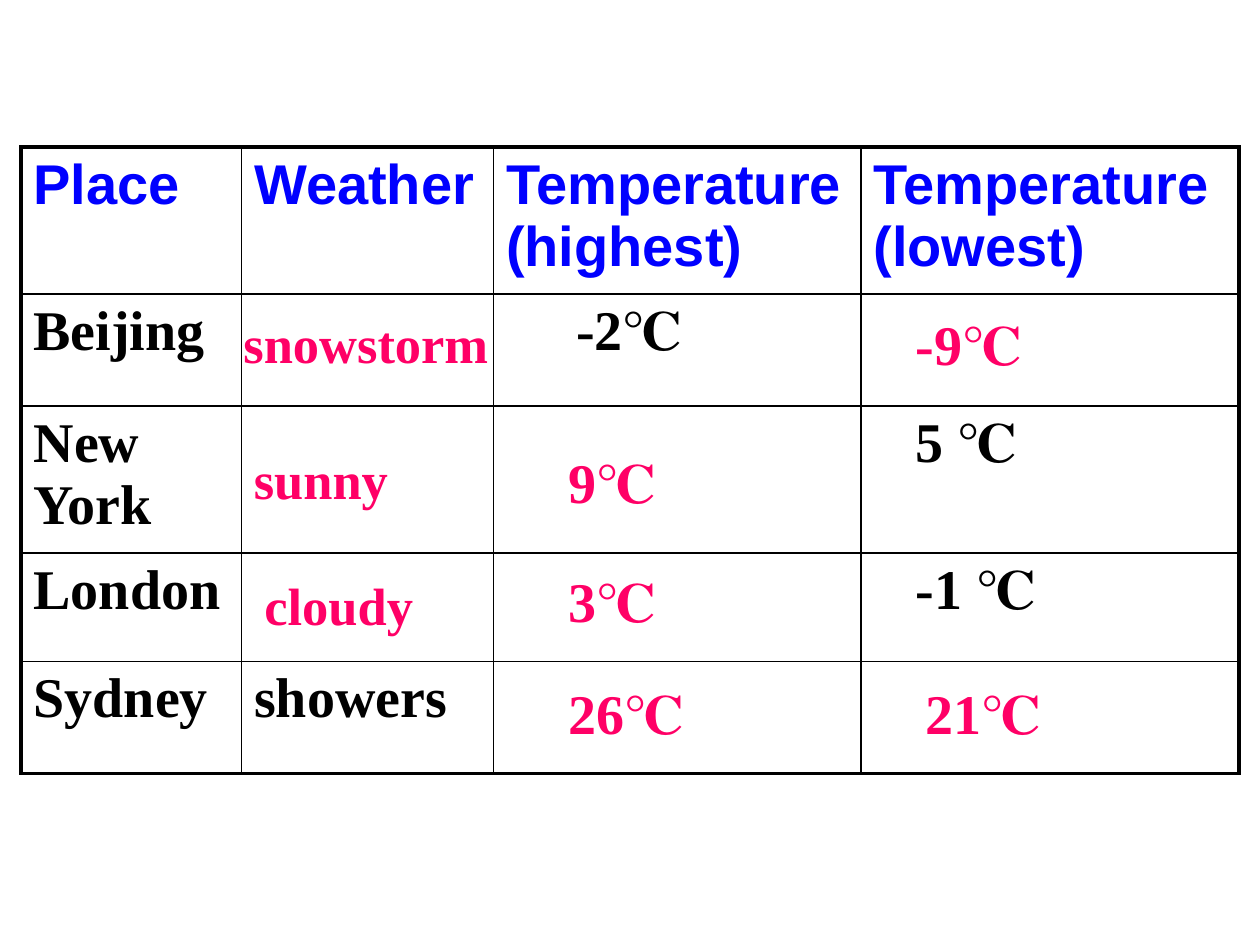
"""Build a slide with a weather table and its filled-in answers."""
from lxml import etree
from pptx import Presentation
from pptx.dml.color import RGBColor
from pptx.enum.text import MSO_AUTO_SIZE
from pptx.oxml.ns import qn
from pptx.util import Pt

GROW = MSO_AUTO_SIZE.SHAPE_TO_FIT_TEXT
BLUE, BLACK, PINK = "0000FF", "000000", "FF0066"
HEADING_FONT, BODY_FONT = "Arial", "Times New Roman"

WEATHER = [
    ["Place", "Weather", "Temperature (highest)", "Temperature (lowest)"],
    ["Beijing", "", "-2℃", ""],
    ["New York", "", "", "5 ℃"],
    ["London", "", "", "-1 ℃"],
    ["Sydney", "showers", "", ""],
]
TABLE_LEFT, TABLE_TOP = 12, 84
COLUMN_WIDTHS = [126, 144, 210, 216]
ROW_HEIGHTS = [84, 64, 84, 62, 64]
READING_INDENTS = {2: 40, 3: 24}
CELL_MARGIN = 7.2
INNER_LINE, OUTER_LINE = 1, 2.25

ANSWERS = [
    ("snowstorm", 132, 174, 192, 30),
    ("-9℃", 516, 173.5, 120, 32),
    ("sunny", 138, 252, 150, 30),
    ("cloudy", 144, 324, 126, 30),
    ("9℃", 318, 252, 120, 32),
    ("3℃", 318, 320.4, 120, 32),
    ("26℃", 318, 384, 120, 32),
    ("21℃", 522, 384, 120, 32),
]


def rgb(color):
    return RGBColor.from_string(color)


def write(frame, text, font_name, size, color, space_before):
    paragraph = frame.paragraphs[0]
    paragraph.text = text
    paragraph.space_before = Pt(space_before)
    font = paragraph.font
    font.name, font.size, font.bold = font_name, Pt(size), True
    font.color.rgb = rgb(color)


def set_borders(cell, widths):
    properties = cell._tc.get_or_add_tcPr()
    for position, (side, width) in enumerate(widths.items()):
        line = etree.Element(qn(f"a:ln{side}"), w=str(Pt(width)))
        fill = etree.SubElement(line, qn("a:solidFill"))
        etree.SubElement(fill, qn("a:srgbClr"), val=BLACK)
        properties.insert(position, line)


def add_weather_table(slide):
    last_row, last_column = len(ROW_HEIGHTS) - 1, len(COLUMN_WIDTHS) - 1
    table = slide.shapes.add_table(
        len(ROW_HEIGHTS), len(COLUMN_WIDTHS), Pt(TABLE_LEFT), Pt(TABLE_TOP),
        Pt(sum(COLUMN_WIDTHS)), Pt(sum(ROW_HEIGHTS))).table
    table.first_row = table.horz_banding = False
    for column, width in zip(table.columns, COLUMN_WIDTHS):
        column.width = Pt(width)
    for row, height in zip(table.rows, ROW_HEIGHTS):
        row.height = Pt(height)
    for r, entries in enumerate(WEATHER):
        for c, entry in enumerate(entries):
            cell = table.cell(r, c)
            cell.fill.background()
            indent = READING_INDENTS.get(c, 0) if r else 0
            cell.margin_left = Pt(CELL_MARGIN + indent)
            font_name, color = (BODY_FONT, BLACK) if r else (HEADING_FONT, BLUE)
            write(cell.text_frame, entry, font_name, 32, color, 1)
            on_edge = {"L": c == 0, "R": c == last_column,
                       "T": r == 0, "B": r == last_row}
            set_borders(cell, {side: OUTER_LINE if outer else INNER_LINE
                               for side, outer in on_edge.items()})


def add_answer(slide, text, left, top, width, size):
    height = 45.2 if size == 32 else 43.2
    frame = slide.shapes.add_textbox(
        Pt(left), Pt(top), Pt(width), Pt(height)).text_frame
    frame.word_wrap = True
    frame.auto_size = GROW
    write(frame, text, BODY_FONT, size, PINK, 3)


def main():
    deck = Presentation()
    deck.slide_width, deck.slide_height = Pt(720), Pt(540)
    slide = deck.slides.add_slide(deck.slide_layouts[6])
    add_weather_table(slide)
    for answer in ANSWERS:
        add_answer(slide, *answer)
    deck.save("out.pptx")


if __name__ == "__main__":
    main()
